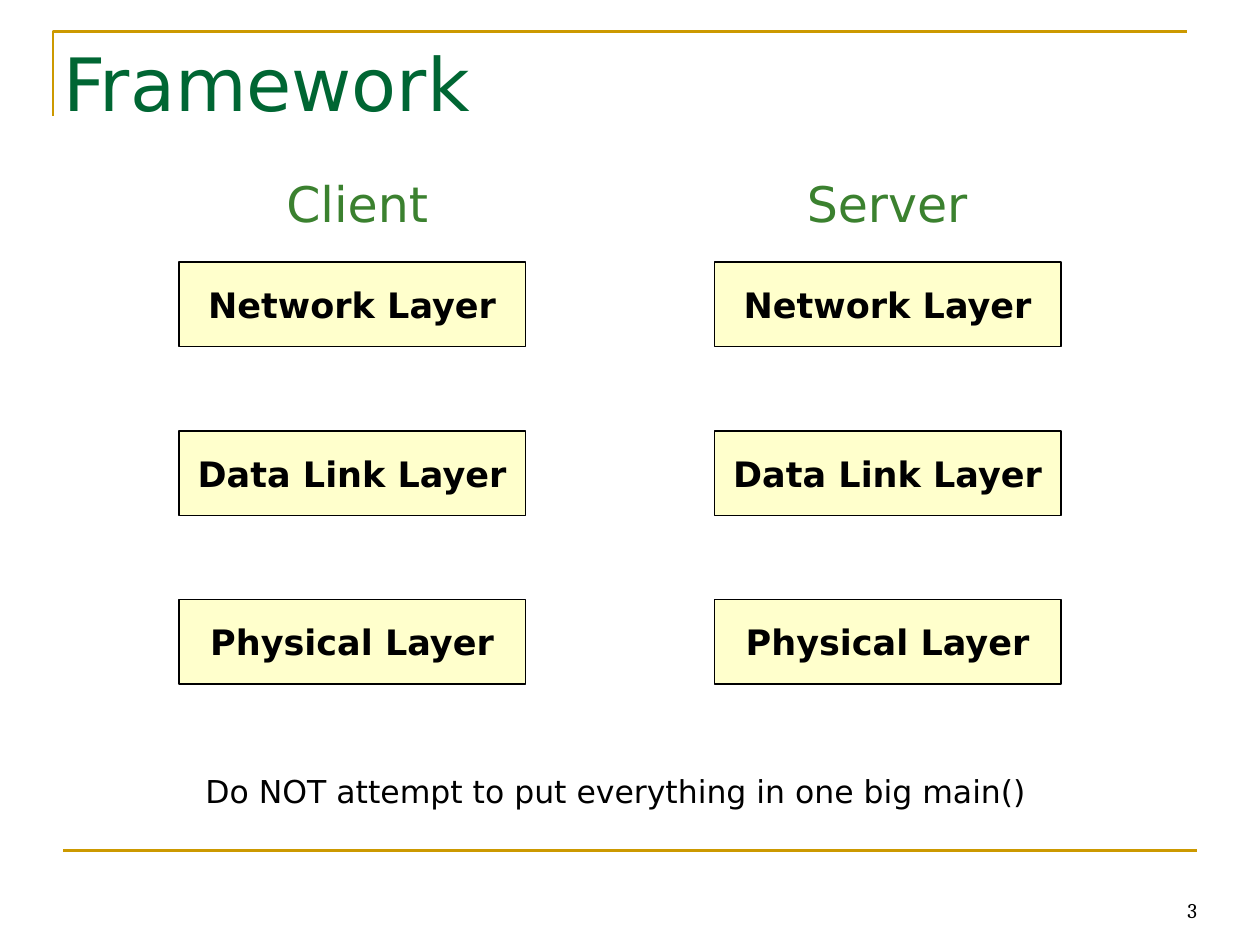
from lxml import etree
from pptx import Presentation
from pptx.dml.color import RGBColor
from pptx.enum import shapes, text
from pptx.oxml import ns
from pptx.util import Inches, Pt

TITLE = "Framework"
COLUMNS = [  # heading, heading left, heading width, box left
    ("Client", 1.92, 1.83, 1.42),
    ("Server", 6.08, 1.92, 5.67),
]
LAYERS = ["Network Layer", "Data Link Layer", "Physical Layer"]
ADVICE = "Do NOT attempt to put everything in one big main()"
PAGE_NUMBER = "3"

GOLD, GREEN, LEAF, CREAM, BLACK = "CC9900", "006633", "3B812F", "FFFFCC", "000000"
BOX_TOP, BOX_WIDTH, BOX_HEIGHT = 2.08, 2.75, 0.67
BOX_PITCH = 2 * BOX_HEIGHT


def color(value):
    return RGBColor.from_string(value)


def write(shape, words, size, fill=BLACK, font="DejaVu Sans", bold=False,
          align=text.PP_ALIGN.LEFT, anchor=text.MSO_ANCHOR.TOP, inset=0,
          wrap=True, before=0):
    frame = shape.text_frame
    frame.word_wrap = wrap
    frame.auto_size = text.MSO_AUTO_SIZE.NONE
    frame.vertical_anchor = anchor
    frame.margin_left = frame.margin_right = Inches(inset)
    frame.margin_top = frame.margin_bottom = Inches(inset)
    paragraph = frame.paragraphs[0]
    paragraph.alignment = align
    paragraph.space_before = Pt(before)
    run = paragraph.add_run()
    run.text = words
    run.font.name = font
    run.font.size = Pt(size)
    run.font.bold = bold
    run.font.color.rgb = color(fill)


def add_text(slide, box, words, size, **style):
    write(slide.shapes.add_textbox(*map(Inches, box)), words, size, **style)


def set_line(shape, value, width):
    shape.line.color.rgb = color(value)
    shape.line.width = Pt(width)


def add_frame_lines(slide):
    """Draw the corner line around the title and the rule at the foot."""
    builder = slide.shapes.build_freeform(Inches(0.42), Inches(0.92))
    builder.add_line_segments(
        [(Inches(0.42), Inches(0.25)), (Inches(9.42), Inches(0.25))], close=False)
    corner = builder.convert_to_shape()
    corner.fill.background()
    corner.shadow.inherit = False
    set_line(corner, GOLD, 1.5)

    rule = slide.shapes.add_connector(
        shapes.MSO_CONNECTOR.STRAIGHT,
        Inches(0.5), Inches(6.75), Inches(9.5), Inches(6.75))
    set_line(rule, GOLD, 1.5)
    etree.SubElement(rule._element.spPr, ns.qn("a:effectLst"))


def add_layer(slide, left, top, name):
    box = slide.shapes.add_shape(
        shapes.MSO_SHAPE.RECTANGLE,
        *map(Inches, (left, top, BOX_WIDTH, BOX_HEIGHT)))
    box.shadow.inherit = False
    box.fill.solid()
    box.fill.fore_color.rgb = color(CREAM)
    set_line(box, BLACK, 0.75)
    write(box, name, 20, bold=True, align=text.PP_ALIGN.CENTER,
          anchor=text.MSO_ANCHOR.MIDDLE)


def main():
    presentation = Presentation()
    presentation.slide_width, presentation.slide_height = Inches(10), Inches(7.5)
    slide = presentation.slides.add_slide(presentation.slide_layouts[5])

    add_frame_lines(slide)
    add_text(slide, (7.17, 7.13, 2.33, 0.19), PAGE_NUMBER, 12, font="Cambria",
             align=text.PP_ALIGN.RIGHT, anchor=text.MSO_ANCHOR.BOTTOM)

    title = slide.shapes.title
    title.left, title.top = Inches(0.5), Inches(0.3)
    title.width, title.height = Inches(9), Inches(1.25)
    write(title, TITLE, 42, fill=GREEN)

    for heading, heading_left, heading_width, box_left in COLUMNS:
        for row, layer in enumerate(LAYERS):
            add_layer(slide, box_left, BOX_TOP + row * BOX_PITCH, layer)
        add_text(slide, (heading_left, 1.33, heading_width, 0.57), heading, 28,
                 fill=LEAF, align=text.PP_ALIGN.CENTER, inset=0.05, before=16)

    add_text(slide, (1.58, 6.08, 6.69, 0.41), ADVICE, 18, inset=0.05, wrap=False)
    presentation.save("out.pptx")


if __name__ == "__main__":
    main()
